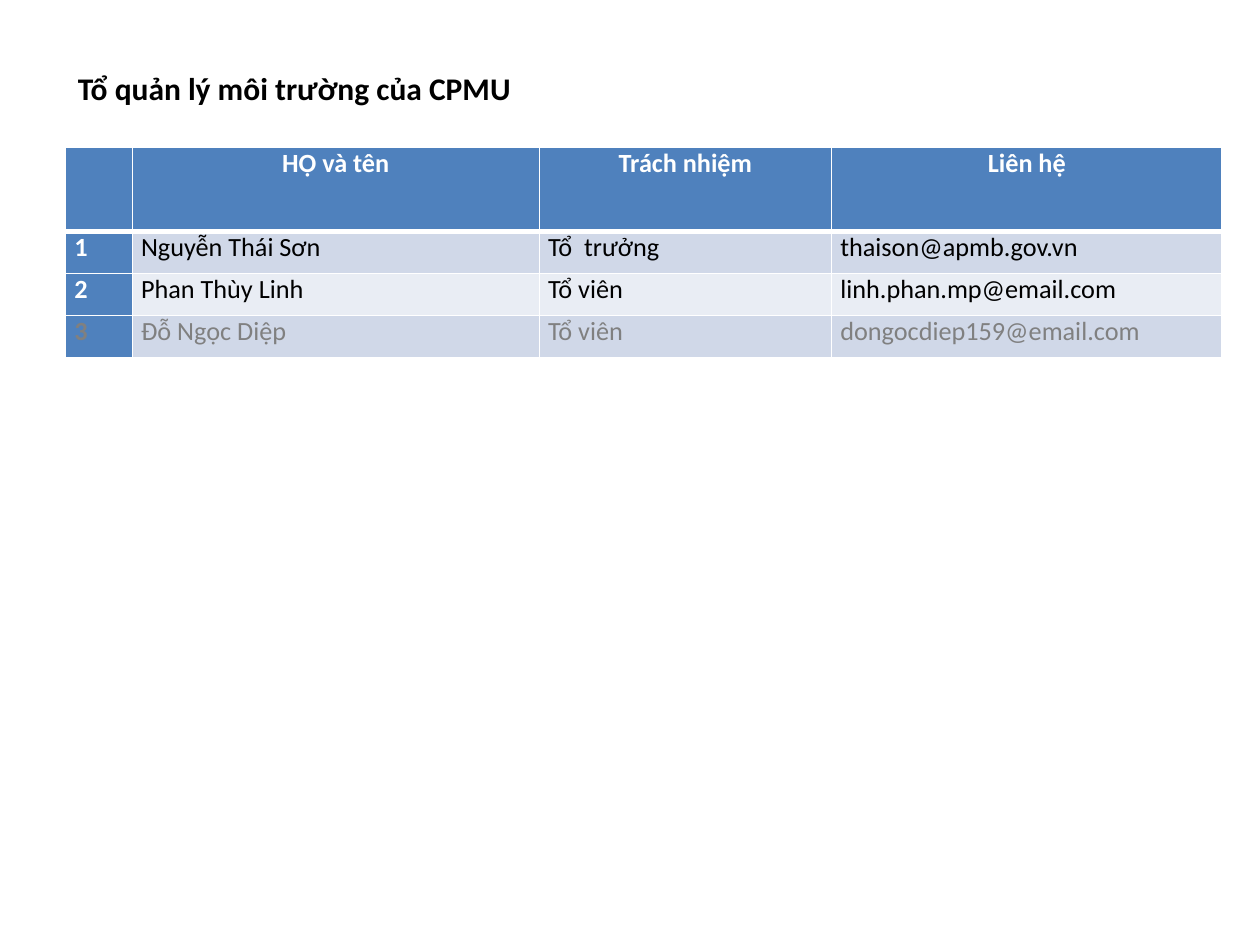
from dataclasses import dataclass

from lxml import etree
from pptx import Presentation
from pptx.dml.color import RGBColor
from pptx.enum.text import MSO_AUTO_SIZE, PP_ALIGN
from pptx.oxml.ns import qn
from pptx.slide import Slide
from pptx.util import Inches, Pt

CENTER, JUSTIFY = PP_ALIGN.CENTER, PP_ALIGN.JUSTIFY
FIT_SHAPE = MSO_AUTO_SIZE.SHAPE_TO_FIT_TEXT
BLACK = RGBColor(0x00, 0x00, 0x00)
WHITE = RGBColor(0xFF, 0xFF, 0xFF)
GRAY = RGBColor(0x80, 0x80, 0x80)
BLUE = RGBColor(0x4F, 0x81, 0xBD)
BANDS = (RGBColor(0xE9, 0xED, 0xF4), RGBColor(0xD0, 0xD8, 0xE8))

WIDTH, HEIGHT = Inches(10), Inches(7.5)
LEFT, CONTENT_WIDTH = 0.052, 0.917
COLUMN_SHARES = (0.053, 0.323, 0.232, 0.31)
ROW_UNIT = 1 / 22.5
ROW_UNITS = (2, 1, 1, 1)
MEMBERS = (
    ("", "HỌ và tên", "Trách nhiệm", "Liên hệ"),
    ("1", "Nguyễn Thái Sơn", "Tổ  trưởng", "thaison@apmb.gov.vn"),
    ("2", "Phan Thùy Linh", "Tổ viên", "linh.phan.mp@email.com"),
    ("3", "Đỗ Ngọc Diệp", "Tổ viên", "dongocdiep159@email.com"),
)
INACTIVE_ROW = 3


@dataclass
class SlideBuilder:
    """Draw styled elements on a slide, placed by shares of its size."""

    slide: Slide
    font_name: str = "Calibri"
    title_size: float = 18
    table_size: float = 15

    def style(self, paragraph, size, color, bold, alignment=None):
        font = paragraph.font
        font.name, font.size, font.bold = self.font_name, Pt(size), bold
        font.color.rgb = color
        paragraph.alignment = alignment

    def title(self, text, left, top, width, height):
        shape = self.slide.shapes.add_textbox(
            int(left * WIDTH), int(top * HEIGHT), int(width * WIDTH), int(height * HEIGHT))
        frame = shape.text_frame
        frame.word_wrap, frame.auto_size = True, FIT_SHAPE
        frame.text = text
        self.style(frame.paragraphs[0], self.title_size, BLACK, True)

    def borders(self, cell, top, bottom):
        properties = cell._tc.get_or_add_tcPr()
        for side, points in (("L", 1), ("R", 1), ("T", top), ("B", bottom)):
            line = etree.SubElement(properties, qn(f"a:ln{side}"), w=str(Pt(points)))
            fill = etree.SubElement(line, qn("a:solidFill"))
            etree.SubElement(fill, qn("a:srgbClr"), val=str(WHITE))

    def cell(self, cell, text, row, column):
        header, heading = row == 0, row == 0 or column == 0
        cell.margin_left = cell.margin_right = Inches(0.07)
        cell.margin_top = cell.margin_bottom = 0
        self.borders(cell, 3 if row == 1 else 1, 3 if header else 1)
        cell.fill.solid()
        cell.fill.fore_color.rgb = BLUE if heading else BANDS[row % 2]
        cell.text = text
        color = GRAY if row == INACTIVE_ROW else WHITE if heading else BLACK
        self.style(cell.text_frame.paragraphs[0], self.table_size, color, heading,
                   CENTER if header else JUSTIFY)

    def table(self, rows, left, top):
        table = self.slide.shapes.add_table(
            len(rows), len(COLUMN_SHARES), int(left * WIDTH), int(top * HEIGHT),
            int(sum(COLUMN_SHARES) * WIDTH), int(sum(ROW_UNITS) * ROW_UNIT * HEIGHT)).table
        for column, share in zip(table.columns, COLUMN_SHARES):
            column.width = int(share * WIDTH)
        for row, units in zip(table.rows, ROW_UNITS):
            row.height = int(units * ROW_UNIT * HEIGHT)
        for row, texts in enumerate(rows):
            for column, text in enumerate(texts):
                self.cell(table.cell(row, column), text, row, column)


def main():
    presentation = Presentation()
    presentation.slide_width, presentation.slide_height = WIDTH, HEIGHT
    builder = SlideBuilder(presentation.slides.add_slide(presentation.slide_layouts[6]))
    builder.title("Tổ quản lý môi trường của CPMU", LEFT, 0.067, CONTENT_WIDTH, 0.053)
    builder.table(MEMBERS, LEFT, 0.156)
    presentation.save("out.pptx")


if __name__ == "__main__":
    main()
